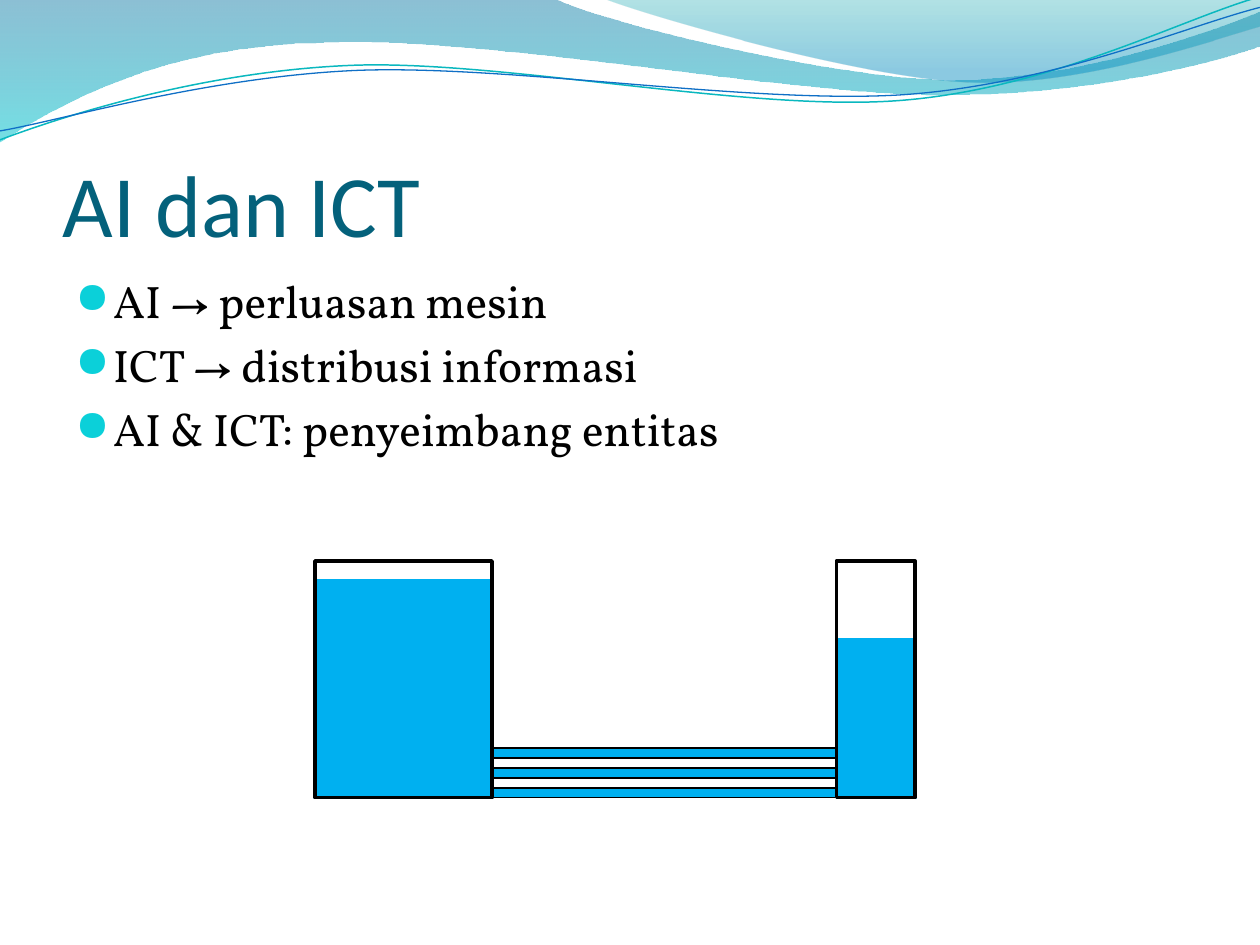
from lxml import etree
from pptx import Presentation
from pptx.dml.color import RGBColor
from pptx.enum.shapes import MSO_SHAPE
from pptx.enum.text import MSO_ANCHOR
from pptx.oxml.ns import qn
from pptx.util import Cm, Pt

RECTANGLE = MSO_SHAPE.RECTANGLE
TOP, BOTTOM = MSO_ANCHOR.TOP, MSO_ANCHOR.BOTTOM

BLACK = RGBColor(0x00, 0x00, 0x00)
WATER = RGBColor(0x00, 0xB0, 0xF0)
TITLE_BLUE = RGBColor(0x04, 0x61, 0x7B)
BULLET_TEAL = RGBColor(0x0B, 0xD0, 0xD9)
LINE_TEAL = RGBColor(0x0A, 0xB8, 0xBF)
LINE_BLUE = RGBColor(0x0F, 0x6F, 0xC6)
DEEP_BLUE = RGBColor(0x00, 0x74, 0xA1)
AQUA = RGBColor(0x00, 0xC6, 0xCF)
DARK_TEAL = RGBColor(0x00, 0xA1, 0xA9)
SKY_BLUE = RGBColor(0x00, 0x8B, 0xBF)

# Each outline is a start point and segments, in centimetres:
# one point makes a straight line, three make a Bezier curve.
WIDE_WAVE = [
    (0, -0.03), [(11.18, -0.03)],
    [(12.09, 0.43), (16.87, 1.6), (19.25, 1.6)],
    [(21.67, 1.6), (24.33, 0.66), (25.4, 0.23)],
    [(25.43, 0.91)],
    [(24.97, 1.12), (22.1, 1.93), (18.95, 1.91)],
    [(15.8, 1.91), (9.7, 0.71), (6.53, 0.86)],
    [(3.28, 0.89), (1.17, 2.11), (-0.03, 2.87)],
    [(0, -0.03)],
]
RIGHT_WAVE = [
    (12.17, -0.03),
    [(12.93, 0.28), (17.32, 1.57), (19.53, 1.65)],
    [(21.74, 1.75), (24.41, 0.81), (25.4, 0.53)],
    [(25.4, 0)],
    [(12.17, -0.03)],
]
TEAL_CURVE = [
    (0, 2.82),
    [(1.22, 2.36), (4.01, 1.45), (7.04, 1.32)],
    [(10.03, 1.19), (15.06, 2.26), (18.11, 2.03)],
    [(21.16, 1.8), (23.83, 0.38), (25.35, -0.05)],
]
BLUE_CURVE = [
    (0, 2.64),
    [(1.19, 2.44), (4.17, 1.55), (7.19, 1.42)],
    [(10.24, 1.3), (15.16, 2.11), (18.21, 1.91)],
    [(21.23, 1.7), (23.9, 0.53), (25.4, 0.15)],
]

TANK_TOP, TANK_BOTTOM = 11.31, 16.08
LEFT_TANK_X, LEFT_TANK_WIDTH = 6.35, 3.57
RIGHT_TANK_X, RIGHT_TANK_WIDTH = 16.86, 1.59
PIPE_HEIGHT, PIPE_COUNT = 0.2, 3


def add_outline(slide, outline, close):
    start, *segments = outline
    points = [(Cm(x), Cm(y)) for segment in segments for x, y in segment]
    builder = slide.shapes.build_freeform(Cm(start[0]), Cm(start[1]))
    builder.add_line_segments(points, close=close)
    shape = builder.convert_to_shape()
    shape.shadow.inherit = False
    bend_segments(shape, segments)
    return shape


def bend_segments(shape, segments):
    """Join each three-point segment of a drawn outline into a Bezier curve."""
    lines = iter(list(shape._element.spPr.iter(qn("a:lnTo"))))
    for segment in segments:
        group = [next(lines) for point in segment]
        if len(group) == 3:
            curve = etree.Element(qn("a:cubicBezTo"))
            group[0].addprevious(curve)
            for line in group:
                curve.append(line[0])
                line.getparent().remove(line)


def add_wave(slide, outline, stops):
    """Add a wave with a top-down gradient of (position, colour, opacity) stops."""
    wave = add_outline(slide, outline, close=True)
    wave.line.fill.background()
    wave.fill.gradient()
    wave.fill.gradient_angle = 270
    for stop, (position, colour, opacity) in zip(wave.fill.gradient_stops, stops):
        stop.position = position
        stop.color.rgb = colour
    colours = wave._element.spPr.iter(qn("a:srgbClr"))
    for element, (position, colour, opacity) in zip(colours, stops):
        etree.SubElement(element, qn("a:alpha"), val=str(opacity * 1000))


def add_curve(slide, outline, colour, width):
    curve = add_outline(slide, outline, close=False)
    curve.fill.background()
    curve.line.color.rgb = colour
    curve.line.width = Pt(width)


def add_rectangle(slide, x, y, width, height, fill=None, line=BLACK, line_width=2):
    box = slide.shapes.add_shape(RECTANGLE, Cm(x), Cm(y), Cm(width), Cm(height))
    box.shadow.inherit = False
    if fill is None:
        box.fill.background()
    else:
        box.fill.solid()
        box.fill.fore_color.rgb = fill
    box.line.color.rgb = line
    box.line.width = Pt(line_width)


def add_tank(slide, x, width, water_tops):
    """Add a tank whose water is drawn once from each level to the bottom."""
    for water_top in water_tops:
        add_rectangle(slide, x, water_top, width, TANK_BOTTOM - water_top,
                      fill=WATER, line=WATER)
    add_rectangle(slide, x, TANK_TOP, width, TANK_BOTTOM - TANK_TOP)


def add_pipes(slide):
    x = LEFT_TANK_X + LEFT_TANK_WIDTH
    for number in range(PIPE_COUNT):
        y = TANK_BOTTOM - PIPE_HEIGHT * (2 * number + 1)
        add_rectangle(slide, x, y, RIGHT_TANK_X - x, PIPE_HEIGHT,
                      fill=WATER, line_width=1)


def add_bullet(para):
    properties = para._p.get_or_add_pPr()
    properties.set("marL", str(Cm(0.76)))
    properties.set("indent", str(-Cm(0.76)))
    space = etree.SubElement(properties, qn("a:spcBef"))
    etree.SubElement(space, qn("a:spcPct"), val="20000")
    colour = etree.SubElement(properties, qn("a:buClr"))
    etree.SubElement(colour, qn("a:srgbClr"), val=str(BULLET_TEAL))
    etree.SubElement(properties, qn("a:buSzPct"), val="95000")
    etree.SubElement(properties, qn("a:buFont"), typeface="OpenSymbol")
    etree.SubElement(properties, qn("a:buChar"), char="●")


def add_text(slide, lines, x, y, width, height, *, font, size, colour,
             anchor=TOP, insets=(0.25, 0.13, 0.25, 0.13), bullets=False):
    box = slide.shapes.add_textbox(Cm(x), Cm(y), Cm(width), Cm(height))
    frame = box.text_frame
    frame.word_wrap = True
    frame.vertical_anchor = anchor
    (frame.margin_left, frame.margin_top,
     frame.margin_right, frame.margin_bottom) = map(Cm, insets)
    for number, line in enumerate(lines):
        para = frame.add_paragraph() if number else frame.paragraphs[0]
        span = para.add_run()
        span.text = line
        span.font.name = font
        span.font.size = Pt(size)
        span.font.color.rgb = colour
        if bullets:
            add_bullet(para)


def main():
    deck = Presentation()
    deck.slide_width, deck.slide_height = Cm(25.4), Cm(19.05)
    page = deck.slides.add_slide(deck.slide_layouts[6])

    add_wave(page, WIDE_WAVE, [(0, DEEP_BLUE, 45), (1, AQUA, 55)])
    add_wave(page, RIGHT_WAVE, [(0, DARK_TEAL, 30), (0.8, SKY_BLUE, 45)])
    add_curve(page, TEAL_CURVE, LINE_TEAL, 0.85)
    add_curve(page, BLUE_CURVE, LINE_BLUE, 0.75)

    add_pipes(page)
    add_text(page, ["AI dan ICT"], 1.27, 1.96, 22.86, 3.18, font="Calibri", size=50,
             colour=TITLE_BLUE, anchor=BOTTOM, insets=(0, 0.13, 0, 0))
    add_text(page, ["AI → perluasan mesin", "ICT → distribusi informasi",
                    "AI & ICT: penyeimbang entitas"],
             1.27, 5.38, 22.86, 12.19, font="Vollkorn", size=26,
             colour=BLACK, bullets=True)
    add_tank(page, LEFT_TANK_X, LEFT_TANK_WIDTH, water_tops=[11.71])
    add_tank(page, RIGHT_TANK_X, RIGHT_TANK_WIDTH, water_tops=[12.9, 15.09])

    deck.save("out.pptx")


if __name__ == "__main__":
    main()
